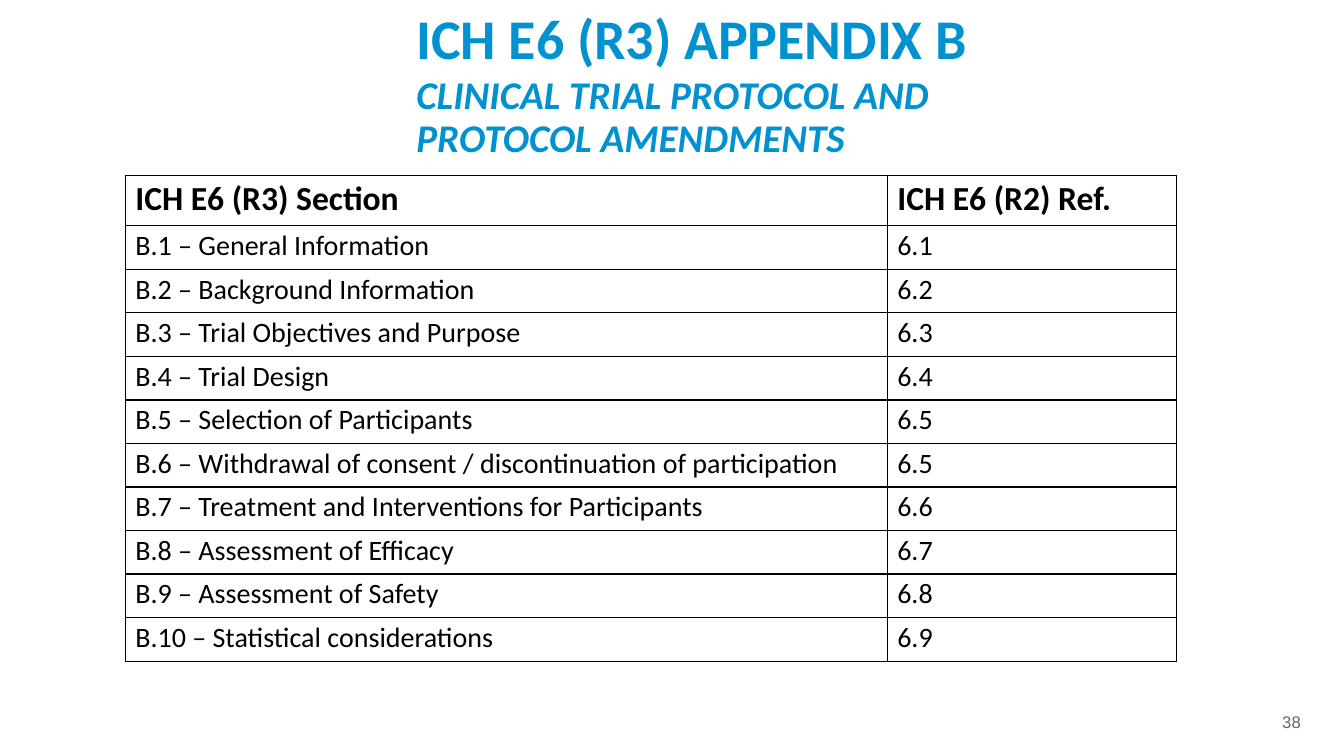
"""Builds a slide that maps ICH E6 (R3) Appendix B sections to their R2 references."""
from lxml import etree
from pptx import Presentation
from pptx.dml.color import RGBColor
from pptx.oxml.ns import qn
from pptx.util import Pt

BLUE = RGBColor(0x00, 0x92, 0xD0)
BLACK = RGBColor(0x00, 0x00, 0x00)
GRAY = RGBColor(0x66, 0x66, 0x66)

HEADER = ("ICH E6 (R3) Section", "ICH E6 (R2) Ref.")
SECTIONS = [
    ("B.1 – General Information", "6.1"),
    ("B.2 – Background Information", "6.2"),
    ("B.3 – Trial Objectives and Purpose", "6.3"),
    ("B.4 – Trial Design", "6.4"),
    ("B.5 – Selection of Participants", "6.5"),
    ("B.6 – Withdrawal of consent / discontinuation of participation", "6.5"),
    ("B.7 – Treatment and Interventions for Participants", "6.6"),
    ("B.8 – Assessment of Efficacy", "6.7"),
    ("B.9 – Assessment of Safety", "6.8"),
    ("B.10 – Statistical considerations", "6.9"),
]
COLUMN_WIDTHS = (544.3, 206.6)
HEADER_HEIGHT = 36
ROW_HEIGHT = 31.12


def add_text(left, top, width, height, lines):
    """Add a text box without margins and return its paragraphs."""
    text_frame = slide.shapes.add_textbox(Pt(left), Pt(top), Pt(width), Pt(height)).text_frame
    text_frame.word_wrap = True
    text_frame.margin_left = text_frame.margin_right = 0
    text_frame.margin_top = text_frame.margin_bottom = 0
    text_frame.text = "\n".join(lines)
    return text_frame.paragraphs


def set_font(paragraph, name, size, color, bold=False, italic=False):
    """Format every run of a paragraph."""
    for run in paragraph.runs:
        run.font.name = name
        run.font.size = Pt(size)
        run.font.color.rgb = color
        run.font.bold = bold
        run.font.italic = italic


presentation = Presentation()
presentation.slide_width = Pt(960)
presentation.slide_height = Pt(540)
slide = presentation.slides.add_slide(presentation.slide_layouts[6])

title, subtitle = add_text(297.5, 3, 410, 113, [
    "ICH E6 (R3) APPENDIX B",
    "CLINICAL TRIAL PROTOCOL AND PROTOCOL AMENDMENTS",
])
title.line_spacing = Pt(47.2)
set_font(title, "Calibri", 40, BLUE, bold=True)
subtitle.line_spacing = Pt(31.2)
subtitle.space_before = Pt(2.3)
set_font(subtitle, "Calibri", 28, BLUE, bold=True, italic=True)

rows = [HEADER] + SECTIONS
table = slide.shapes.add_table(
    len(rows), len(HEADER), Pt(89.7), Pt(125.3), Pt(sum(COLUMN_WIDTHS)),
    Pt(HEADER_HEIGHT + ROW_HEIGHT * len(SECTIONS)),
).table
table.horz_banding = False
for column, width in zip(table.columns, COLUMN_WIDTHS):
    column.width = Pt(width)

for row_index, texts in enumerate(rows):
    is_header = row_index == 0
    table.rows[row_index].height = Pt(HEADER_HEIGHT if is_header else ROW_HEIGHT)
    for column_index, text in enumerate(texts):
        cell = table.cell(row_index, column_index)
        cell.margin_left = Pt(7)
        cell.margin_top = Pt(2.2)
        cell.margin_right = cell.margin_bottom = 0
        cell.text_frame.text = text
        set_font(cell.text_frame.paragraphs[0], "Calibri", 24 if is_header else 20,
                 BLACK, bold=is_header)
        properties = cell._tc.get_or_add_tcPr()
        for side in ("a:lnL", "a:lnR", "a:lnT", "a:lnB"):
            border = etree.SubElement(properties, qn(side), w=str(Pt(1)))
            border_fill = etree.SubElement(border, qn("a:solidFill"))
            etree.SubElement(border_fill, qn("a:srgbClr"), val=str(BLACK))
        cell.fill.background()

page_number = add_text(912.9, 508.3, 25, 15, ["38"])[0]
page_number.line_spacing = Pt(14.2)
page_number.font.size = Pt(12)
set_font(page_number, "Arial", 12, GRAY)
slide_number_indent = page_number._p.get_or_add_pPr()
slide_number_indent.set("marL", str(Pt(3)))

presentation.save("out.pptx")
